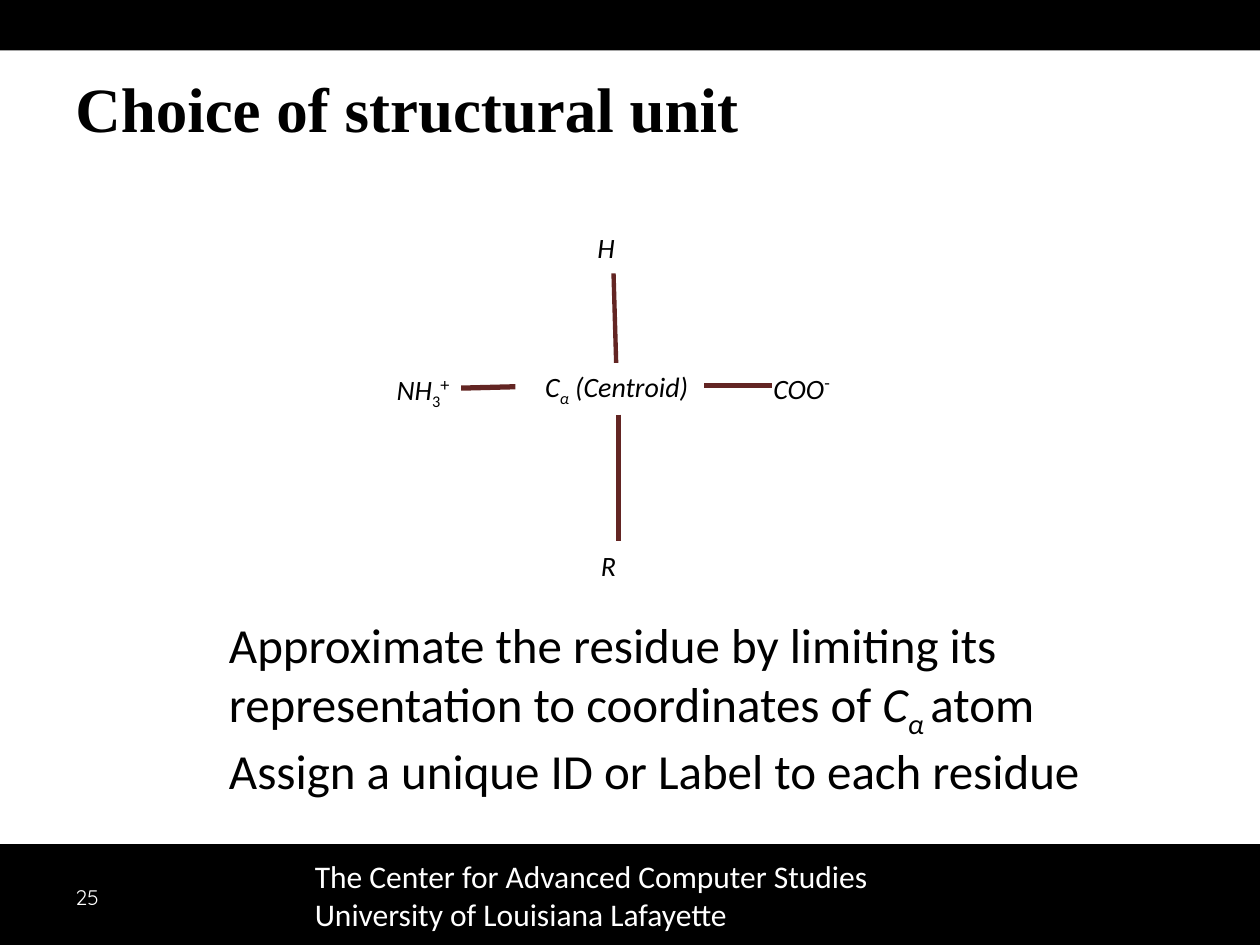
"""Build the slide on the choice of structural unit for a residue."""
from lxml import etree
from pptx import Presentation
from pptx.dml.color import RGBColor
from pptx.enum.shapes import MSO_CONNECTOR, MSO_SHAPE
from pptx.enum.text import MSO_ANCHOR, PP_ALIGN
from pptx.oxml.ns import qn
from pptx.util import Pt

BLACK = RGBColor(0, 0, 0)
WHITE = RGBColor(255, 255, 255)
BOND = RGBColor(0x63, 0x25, 0x23)
LEFT, CENTER = PP_ALIGN.LEFT, PP_ALIGN.CENTER
TOP, MIDDLE = MSO_ANCHOR.TOP, MSO_ANCHOR.MIDDLE
STRAIGHT, RECTANGLE = MSO_CONNECTOR.STRAIGHT, MSO_SHAPE.RECTANGLE

WIDTH, HEIGHT = 720, 540
INSETS = (7.2, 3.6)
BANDS = [(0, 28.8), (482.4, 57.6)]

PLAIN, ITALIC = {}, {"italic": True}
SUBSCRIPT = {"italic": True, "baseline": -25}
UPRIGHT_SUBSCRIPT = {"baseline": -25}
CHARGE = {"baseline": 30, "size": 18}

ATOMS = [
    ([("C", ITALIC), ("α", SUBSCRIPT), (" (Centroid)", ITALIC)],
     (302.4, 207.4, 100, 26.6), {"align": CENTER, "wrap": True}),
    ([("H", ITALIC)], (341.3, 131.8, 13.7, 19.4), {"insets": (0, 0)}),
    ([("R", ITALIC)], (343.4, 313.2, 13, 19.4), {"insets": (0, 0)}),
    ([("NH", ITALIC), ("3", UPRIGHT_SUBSCRIPT), ("+", CHARGE)],
     (219.6, 207.4, 48.2, 26.6), {}),
    ([("COO", ITALIC), ("-", CHARGE)], (434.9, 206.6, 52.6, 26.6), {"wrap": True}),
]
BONDS = [
    ((352.1, 207.4), (350.6, 156.2), 2.5),
    ((294.5, 221), (263.5, 221.8), 3),
    ((402.5, 220.3), (441.4, 220.3), 3),
    ((353.5, 236.9), (353.5, 308.9), 3),
]
STATEMENTS = [
    [("Approximate the residue by limiting its", PLAIN)],
    [("representation to coordinates of ", PLAIN), ("C", ITALIC),
     ("α ", SUBSCRIPT), ("atom", PLAIN)],
    [("Assign a unique ID or Label to each residue", PLAIN)],
]
FOOTER = [
    [("The Center for Advanced Computer Studies", PLAIN)],
    [("University of Louisiana Lafayette", PLAIN)],
]


def add_text(slide, paragraphs, box, size=16, font="Calibri", color=BLACK,
             bold=False, align=LEFT, anchor=TOP, wrap=False, insets=INSETS):
    frame = slide.shapes.add_textbox(*map(Pt, box)).text_frame
    frame.word_wrap = wrap
    frame.vertical_anchor = anchor
    frame.margin_left = frame.margin_right = Pt(insets[0])
    frame.margin_top = frame.margin_bottom = Pt(insets[1])
    for index, pieces in enumerate(paragraphs):
        paragraph = frame.add_paragraph() if index else frame.paragraphs[0]
        paragraph.alignment = align
        for text, style in pieces:
            run = paragraph.add_run()
            run.text = text
            run.font.name = font
            run.font.size = Pt(style.get("size", size))
            run.font.bold = bold
            run.font.italic = style.get("italic", False)
            run.font.color.rgb = color
            if "baseline" in style:
                run.font._element.set("baseline", str(style["baseline"] * 1000))


def add_band(slide, top, height):
    band = slide.shapes.add_shape(RECTANGLE, 0, Pt(top), Pt(WIDTH), Pt(height))
    band.shadow.inherit = False
    band.fill.solid()
    band.fill.fore_color.rgb = BLACK
    band.line.fill.background()


def add_bond(slide, start, end, width):
    bond = slide.shapes.add_connector(STRAIGHT, *map(Pt, start + end))
    bond.line.color.rgb = BOND
    bond.line.width = Pt(width)
    etree.SubElement(bond._element.spPr, qn("a:effectLst"))


def main():
    presentation = Presentation()
    presentation.slide_width, presentation.slide_height = Pt(WIDTH), Pt(HEIGHT)
    slide = presentation.slides.add_slide(presentation.slide_layouts[6])
    for band in BANDS:
        add_band(slide, *band)
    add_text(slide, [[("Choice of structural unit", PLAIN)]], (36, 36, 648, 75.6),
             size=36, font="Times New Roman", bold=True, wrap=True)
    for pieces, box, options in ATOMS:
        add_text(slide, [pieces], box, **options)
    for bond in BONDS:
        add_bond(slide, *bond)
    add_text(slide, STATEMENTS, (123.8, 347.8, 506.2, 108.7), size=28)
    add_text(slide, [[("25", PLAIN)]], (36, 498.2, 162, 28.8), size=12,
             font="Quicksand", color=WHITE, anchor=MIDDLE, wrap=True)
    add_text(slide, FOOTER, (172.8, 486, 361.4, 54), size=18, color=WHITE, wrap=True)
    presentation.save("out.pptx")


if __name__ == "__main__":
    main()
